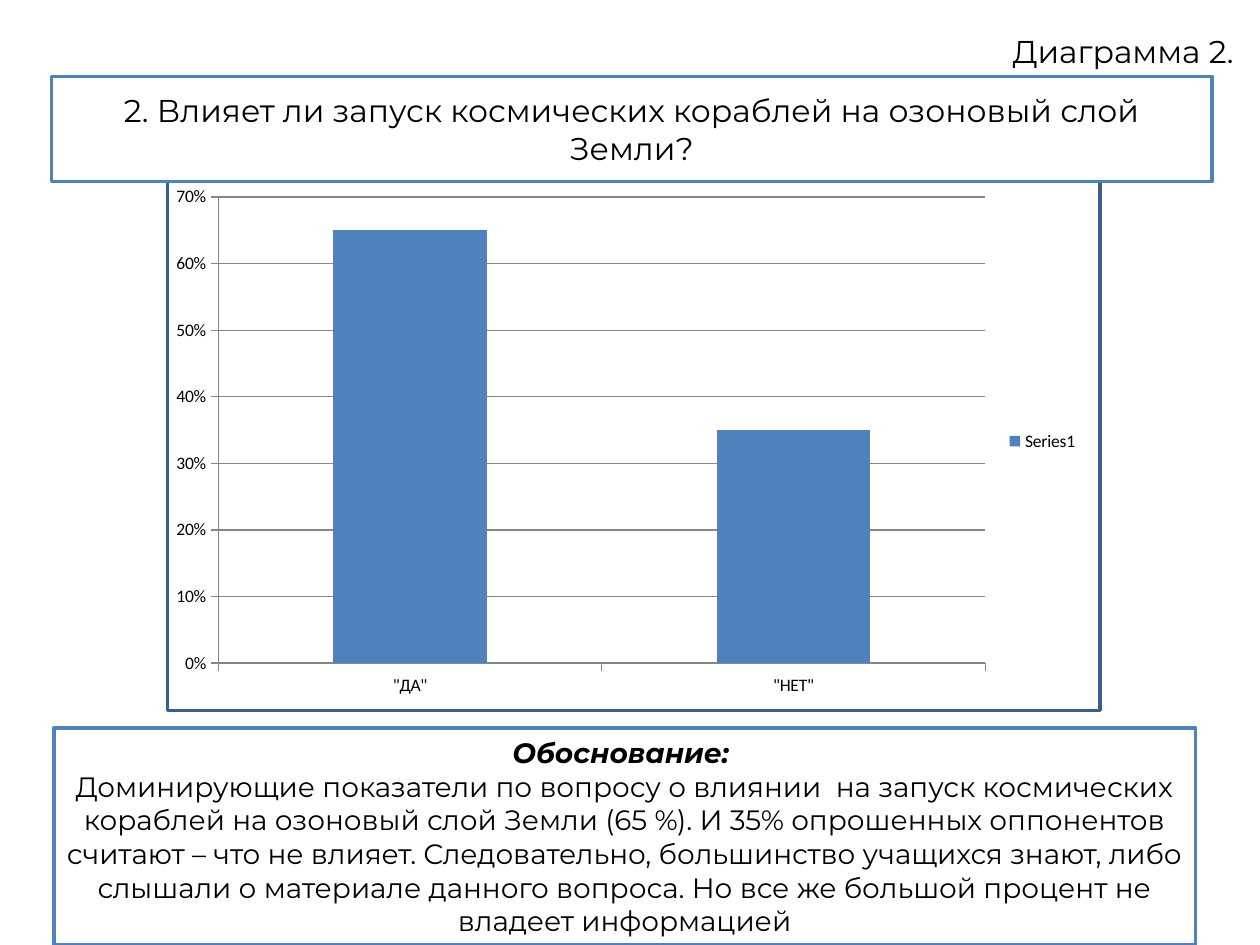
from lxml import etree
from pptx import Presentation
from pptx.chart.data import CategoryChartData
from pptx.dml.color import RGBColor
from pptx.enum.chart import XL_CHART_TYPE, XL_LEGEND_POSITION, XL_TICK_MARK
from pptx.enum.shapes import MSO_SHAPE
from pptx.enum.text import MSO_ANCHOR, MSO_AUTO_SIZE, PP_ALIGN
from pptx.oxml.ns import qn
from pptx.util import Cm, Pt

COLUMNS = XL_CHART_TYPE.COLUMN_CLUSTERED
LEGEND_RIGHT = XL_LEGEND_POSITION.RIGHT
TICK_OUTSIDE = XL_TICK_MARK.OUTSIDE
TICK_NONE = XL_TICK_MARK.NONE
RECTANGLE = MSO_SHAPE.RECTANGLE
MIDDLE = MSO_ANCHOR.MIDDLE
GROW = MSO_AUTO_SIZE.SHAPE_TO_FIT_TEXT
CENTER = PP_ALIGN.CENTER
RIGHT = PP_ALIGN.RIGHT


def color(value):
    return RGBColor.from_string(value)


def write(paragraph, text, font="Montserrat", size=18, ink="000000", bold=False,
          italic=False, align=CENTER):
    paragraph.alignment = align
    span = paragraph.add_run()
    span.text = text
    span.font.name = font
    span.font.size = Pt(size)
    span.font.color.rgb = color(ink)
    span.font.bold = bold
    span.font.italic = italic


class SlideBuilder:
    paper = "FFFFFF"
    ink = "000000"
    accent = "4F81BD"
    frame_line = "3A5F8C"
    grid = "868686"

    def __init__(self, deck):
        self.page = deck.slides.add_slide(deck.slide_layouts[5])

    def outline(self, box, line):
        box.fill.solid()
        box.fill.fore_color.rgb = color(self.paper)
        box.line.color.rgb = color(line)
        box.line.width = Pt(2)

    def fit_text(self, box):
        frame = box.text_frame
        frame.word_wrap = True
        frame.auto_size = GROW
        return frame

    def title(self, text, left, top, width, height):
        box = self.page.shapes.title
        box.left, box.top, box.width, box.height = left, top, width, height
        self.outline(box, self.accent)
        frame = self.fit_text(box)
        frame.vertical_anchor = MIDDLE
        write(frame.paragraphs[0], text)
        self.page.shapes.element.append(box.element)

    def rectangle(self, left, top, width, height, line):
        box = self.page.shapes.add_shape(RECTANGLE, left, top, width, height)
        box.shadow.inherit = False
        self.outline(box, line)
        return box

    def explanation(self, heading, body, left, top, width, height):
        box = self.rectangle(left, top, width, height, self.accent)
        frame = self.fit_text(box)
        frame.vertical_anchor = MIDDLE
        write(frame.paragraphs[0], heading, size=16, bold=True, italic=True)
        write(frame.add_paragraph(), body, size=16)

    def label(self, text, left, top, width, height):
        box = self.page.shapes.add_textbox(left, top, width, height)
        paragraph = self.fit_text(box).paragraphs[0]
        paragraph._p.get_or_add_pPr().set("indent", str(Cm(1.25)))
        write(paragraph, text, align=RIGHT)

    def column_chart(self, categories, name, values, left, top, width, height):
        data = CategoryChartData(number_format="0%")
        data.categories = categories
        data.add_series(name, values)
        chart = self.page.shapes.add_chart(COLUMNS, left, top, width, height, data).chart
        chart.has_title = False
        chart.font.name = "Calibri"
        chart.font.size = Pt(10)
        chart.font.color.rgb = color(self.ink)
        chart.has_legend = True
        chart.legend.position = LEGEND_RIGHT
        chart.legend.include_in_layout = False
        plot = chart.plots[0]
        plot.gap_width = 150
        plot.vary_by_categories = False
        fill = plot.series[0].format.fill
        fill.solid()
        fill.fore_color.rgb = color(self.accent)
        for axis in (chart.category_axis, chart.value_axis):
            axis.major_tick_mark = TICK_OUTSIDE
            axis.minor_tick_mark = TICK_NONE
            axis.format.line.color.rgb = color(self.grid)
        scale = chart.value_axis
        scale.minimum_scale, scale.maximum_scale, scale.major_unit = 0, 0.7, 0.1
        scale.has_major_gridlines = True
        scale.major_gridlines.format.line.color.rgb = color(self.grid)
        scale.tick_labels.number_format = "0%"
        scale.tick_labels.number_format_is_linked = False


def main():
    deck = Presentation()
    deck.slide_width, deck.slide_height = Cm(25.4), Cm(19.05)
    slide = SlideBuilder(deck)
    slide.rectangle(Cm(3.38), Cm(2.74), Cm(18.8), Cm(11.58), slide.frame_line)
    slide.column_chart(['"ДА"', '"НЕТ"'], "Series1", [0.65, 0.35],
                       Cm(3.18), Cm(3.56), Cm(18.82), Cm(10.67))
    slide.title("2. Влияет ли запуск космических кораблей на озоновый слой Земли?",
                Cm(1.04), Cm(1.7), Cm(23.39), Cm(1.8))
    slide.explanation(
        "Обоснование: ",
        "Доминирующие показатели по вопросу о влиянии  на запуск космических кораблей "
        "на озоновый слой Земли (65 %). И 35% опрошенных оппонентов считают – что не "
        "влияет. Следовательно, большинство учащихся знают, либо слышали о материале "
        "данного вопроса. Но все же большой процент не владеет информацией",
        Cm(1.09), Cm(14.68), Cm(23.01), Cm(4.37))
    slide.label("Диаграмма 2.", Cm(16.51), Cm(0.53), Cm(8.61), Cm(1.02))
    deck.save("out.pptx")


if __name__ == "__main__":
    main()
